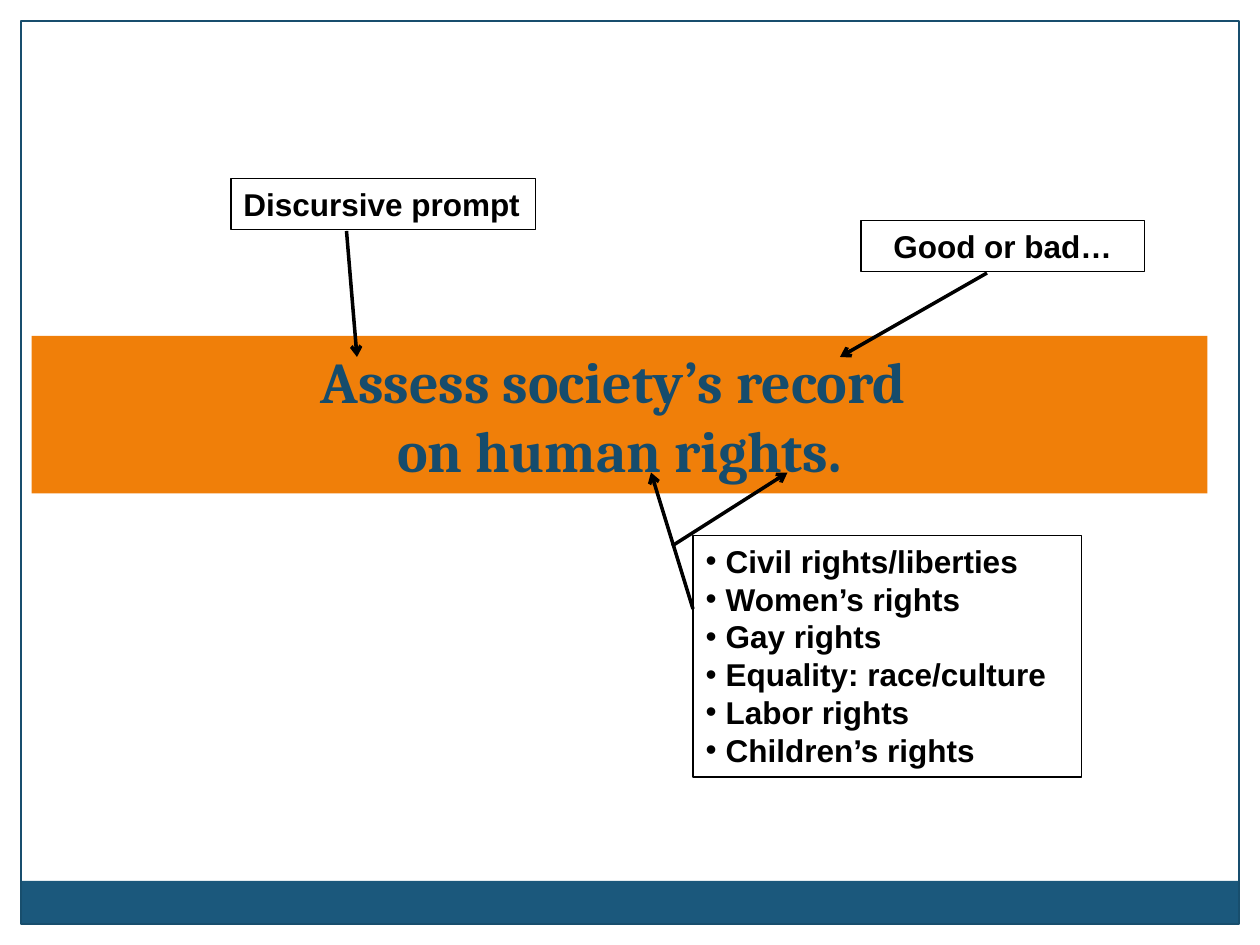
from lxml import etree
from pptx import Presentation
from pptx.dml.color import RGBColor
from pptx.enum.shapes import MSO_CONNECTOR, MSO_SHAPE
from pptx.enum.text import MSO_ANCHOR, MSO_AUTO_SIZE, PP_ALIGN
from pptx.oxml.ns import qn
from pptx.util import Inches, Pt

RECT, STRAIGHT = MSO_SHAPE.RECTANGLE, MSO_CONNECTOR.STRAIGHT
LEFT, CENTER = PP_ALIGN.LEFT, PP_ALIGN.CENTER
TOP, MIDDLE = MSO_ANCHOR.TOP, MSO_ANCHOR.MIDDLE
NO_FIT, GROW = MSO_AUTO_SIZE.NONE, MSO_AUTO_SIZE.SHAPE_TO_FIT_TEXT

BLACK = RGBColor(0x00, 0x00, 0x00)
ORANGE = RGBColor(0xF0, 0x7F, 0x09)
NAVY = RGBColor(0x16, 0x4C, 0x6C)
FRAME_BLUE = RGBColor(0x18, 0x4E, 0x6D)
FOOTER_BLUE = RGBColor(0x1B, 0x58, 0x7C)

UNIT = Inches(1) // 12
TITLE_FONT = {"name": "Cambria", "size": Pt(33), "bold": True}
NOTE_FONT = {"name": "Arial", "size": Pt(18), "bold": True}

RIGHTS = ["Civil rights/liberties", "Women’s rights", "Gay rights",
          "Equality: race/culture", "Labor rights", "Children’s rights"]
ARROWS = [((33, 22), (34, 34)), ((94, 26), (80, 34)),
          ((66, 58), (62, 45)), ((64, 52), (75, 45))]


def place(sp, box):
    """Set a shape's left, top, width and height in grid units."""
    for key, value in zip(("left", "top", "width", "height"), box):
        setattr(sp, key, round(value * UNIT))


def outline(sp, color):
    """Give a shape a thin line."""
    sp.line.color.rgb = color
    sp.line.width = Pt(0.75)


def write(sp, lines, font, color, align, anchor, fit):
    """Fill a shape with equally formatted paragraphs."""
    tf = sp.text_frame
    tf.text = "\n".join(lines)
    tf.word_wrap, tf.auto_size, tf.vertical_anchor = True, fit, anchor
    para = {"alignment": align, "line_spacing": 1.0, "space_before": Pt(0)}
    for p in tf.paragraphs:
        for key, value in para.items():
            setattr(p, key, value)
        for r in p.runs:
            for key, value in font.items():
                setattr(r.font, key, value)
            r.font.color.rgb = color


def add_frame(s, box, footer_height):
    """Draw the slide border with the solid band along its bottom."""
    left, top, width, height = box
    footer = s.shapes.add_shape(RECT, 0, 0, 0, 0)
    place(footer, (left, top + height - footer_height, width, footer_height))
    footer.fill.solid()
    footer.fill.fore_color.rgb = FOOTER_BLUE
    footer.line.fill.background()
    border = s.shapes.add_shape(RECT, 0, 0, 0, 0)
    place(border, box)
    border.fill.background()
    outline(border, FRAME_BLUE)
    for sp in (footer, border):
        sp.shadow.inherit = False


def add_title(s, box):
    """Set the essay prompt on an orange band."""
    sp = s.shapes.title
    place(sp, box)
    sp.fill.solid()
    sp.fill.fore_color.rgb = ORANGE
    write(sp, ["Assess society’s record \von human rights."], TITLE_FONT, NAVY,
          CENTER, MIDDLE, NO_FIT)


def add_note(s, box, text, align):
    """Add an outlined one-line note."""
    sp = s.shapes.add_textbox(0, 0, 0, 0)
    place(sp, box)
    outline(sp, BLACK)
    write(sp, [text], NOTE_FONT, BLACK, align, TOP, GROW)


def add_rights(s, box):
    """List the kinds of rights in the body placeholder."""
    sp = s.placeholders[1]
    place(sp, box)
    outline(sp, BLACK)
    write(sp, RIGHTS, NOTE_FONT, BLACK, LEFT, TOP, NO_FIT)
    hang = Inches(0.16)
    for p in sp.text_frame.paragraphs:
        pPr = p._p.get_or_add_pPr()
        pPr.set("marL", str(hang))
        pPr.set("indent", str(-hang))
        etree.SubElement(pPr, qn("a:buFont")).set("typeface", "Arial")
        etree.SubElement(pPr, qn("a:buChar")).set("char", "•")


def add_arrow(s, start, end):
    """Draw an open-headed arrow between two grid points."""
    c = s.shapes.add_connector(STRAIGHT, *(v * UNIT for v in start + end))
    c.line.color.rgb = BLACK
    c.line.width = Pt(2)
    etree.SubElement(c.line._get_or_add_ln(), qn("a:tailEnd")).set("type", "arrow")
    etree.SubElement(c._element.spPr, qn("a:effectLst"))


def main():
    """Build the annotated prompt slide."""
    prs = Presentation()
    prs.slide_width, prs.slide_height = 120 * UNIT, 90 * UNIT
    s = prs.slides.add_slide(prs.slide_layouts[1])
    add_frame(s, (2, 2, 116, 86), 4.1)
    add_title(s, (3, 32, 112, 15))
    add_note(s, (22, 17, 29, 4.85), "Discursive prompt", LEFT)
    add_note(s, (82, 21, 27, 4.85), "Good or bad…", CENTER)
    add_rights(s, (66, 51, 37, 23))
    for start, end in ARROWS:
        add_arrow(s, start, end)
    prs.save("out.pptx")


if __name__ == "__main__":
    main()
